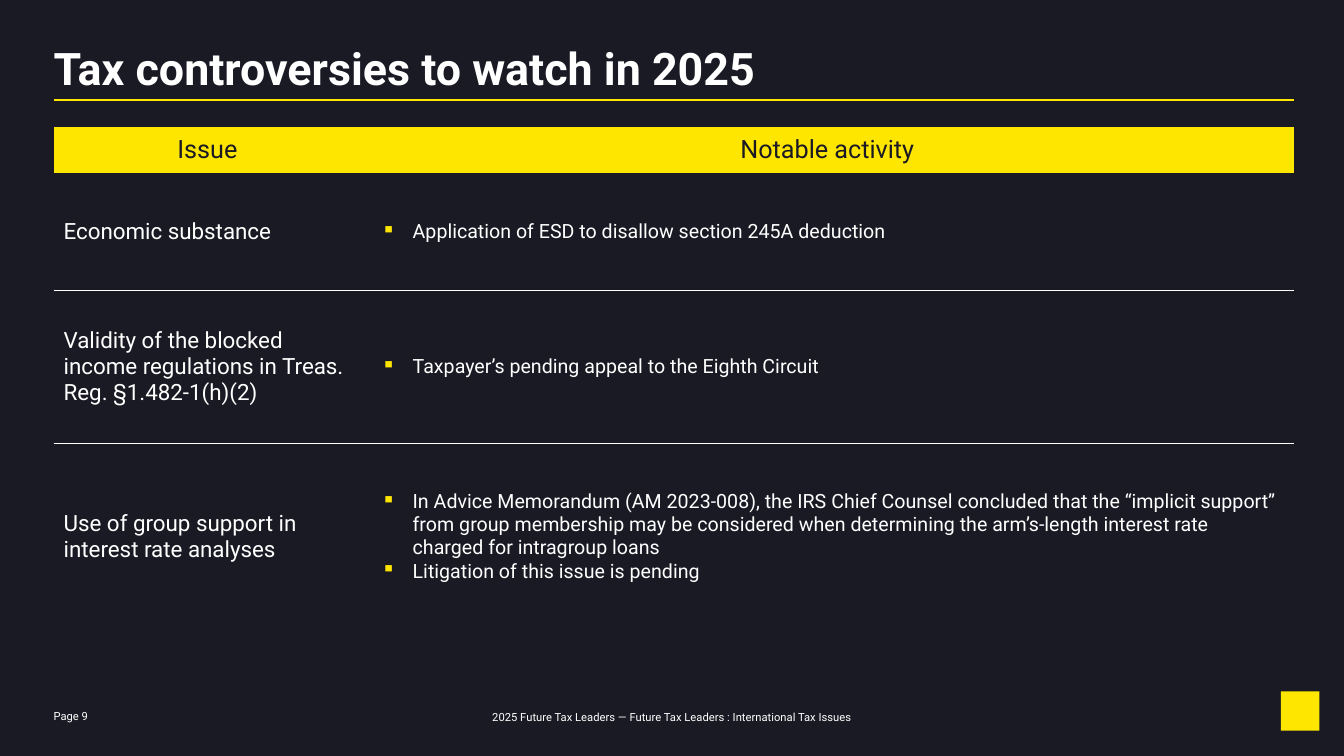
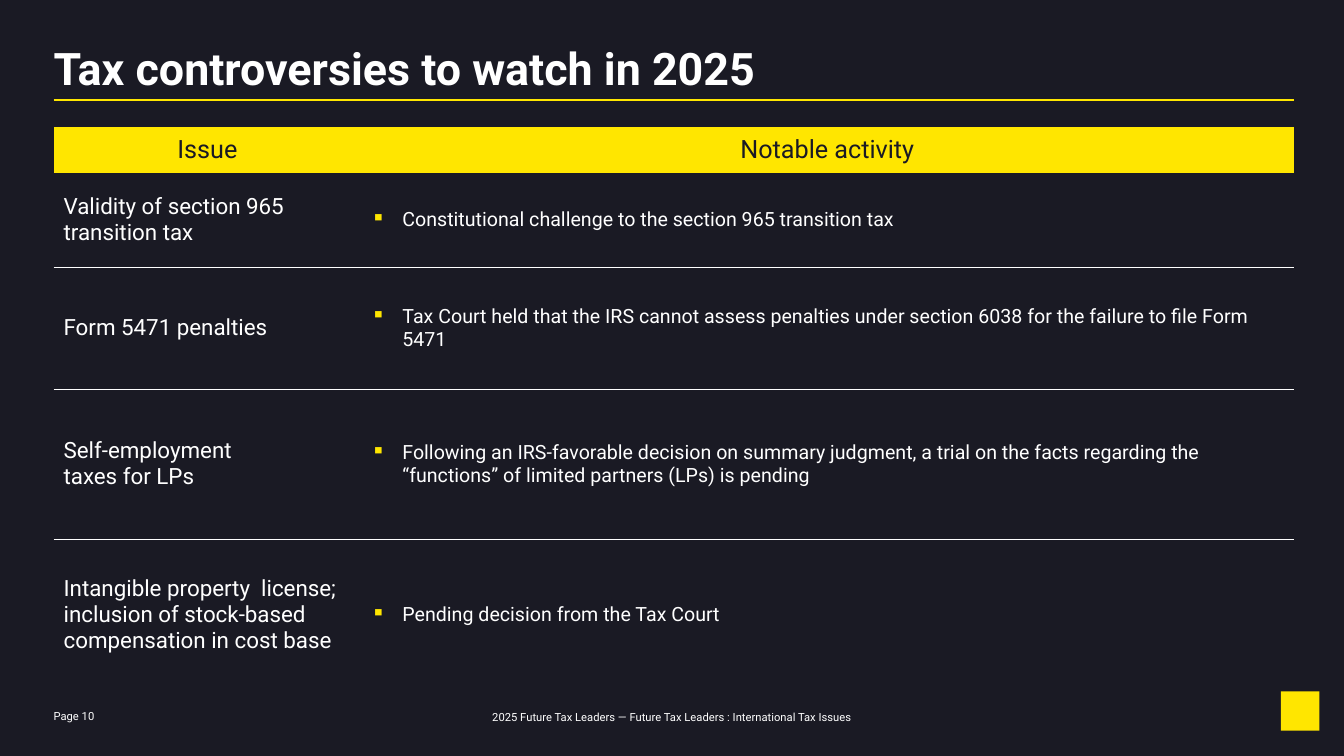
from lxml import etree
from pptx import Presentation
from pptx.dml.color import RGBColor
from pptx.enum import shapes, text
from pptx.oxml import ns, parse_xml
from pptx.util import Cm, Pt

DARK = RGBColor(0x1A, 0x1A, 0x24)
GOLD = RGBColor(0xFF, 0xE6, 0x00)
WHITE = RGBColor(0xFF, 0xFF, 0xFF)
FONT = "Roboto"
PLAIN = "{2D5ABB26-0587-4C30-8999-92F81FD0307C}"  # table style without grid
LEFT, RIGHT = Cm(1.35), Cm(32.61)
COLS = (7.75, 23.5)
HEAD = 1.17
MID = text.MSO_ANCHOR.MIDDLE

TITLE = "Tax controversies to watch in 2025"
FOOTER = "2025 Future Tax Leaders — Future Tax Leaders : International Tax Issues"

# Each slide: page number, left inset of the activity cells, rows of (height, issue, activities)
PAGES = [
    (9, 0.51, [
        (2.95, "Economic substance",
         ["Application of ESD to disallow section 245A deduction"]),
        (3.84, "Validity of the blocked income regulations in Treas. Reg. §1.482-1(h)(2)",
         ["Taxpayer’s pending appeal to the Eighth Circuit"]),
        (4.72, "Use of group support in interest rate analyses",
         ["In Advice Memorandum (AM 2023-008), the IRS Chief Counsel concluded that "
          "the “implicit support” from group membership may be considered when "
          "determining the arm’s-length interest rate charged for intragroup loans",
          "Litigation of this issue is pending"]),
    ]),
    (10, 0.25, [
        (2.36, "Validity of section 965 transition tax",
         ["Constitutional challenge to the section 965 transition tax"]),
        (3.07, "Form 5471 penalties",
         ["Tax Court held that the IRS cannot assess penalties under section 6038 "
          "for the failure to file Form 5471"]),
        (3.8, "Self-employment \vtaxes for LPs",
         ["Following an IRS-favorable decision on summary judgment, a trial on the "
          "facts regarding the “functions” of limited partners (LPs) is pending"]),
        (3.78, "Intangible property  license; inclusion of stock-based compensation in cost base",
         ["Pending decision from the Tax Court"]),
    ]),
]


def write(frame, lines, size, color=WHITE, bold=False, align=None, bullet=False):
    """Fill a text frame with one paragraph per line."""
    frame.word_wrap = True
    for i, line in enumerate(lines):
        para = frame.add_paragraph() if i else frame.paragraphs[0]
        para.text = line
        para.alignment = align
        for run in para.runs:
            font = run.font
            font.name, font.size, font.bold = FONT, Pt(size), bold
            font.color.rgb = color
        if bullet:
            props = para._p.get_or_add_pPr()
            props.set("marL", str(Cm(0.79)))
            props.set("indent", str(-Cm(0.79)))
            tint = etree.SubElement(props, ns.qn("a:buClr"))
            etree.SubElement(tint, ns.qn("a:srgbClr")).set("val", str(GOLD))
            etree.SubElement(props, ns.qn("a:buChar")).set("char", "▪")


def label(slide, line, box, size, anchor=text.MSO_ANCHOR.TOP, **style):
    """Add a text box without insets; box is left, top, width, height in cm."""
    frame = slide.shapes.add_textbox(*map(Cm, box)).text_frame
    frame.margin_left = frame.margin_right = frame.margin_top = frame.margin_bottom = 0
    frame.vertical_anchor = anchor
    write(frame, [line], size, **style)


deck = Presentation()
deck.slide_width, deck.slide_height = Cm(33.87), Cm(19.05)
CENTER = text.PP_ALIGN.CENTER

for page, inset, rows in PAGES:
    slide = deck.slides.add_slide(deck.slide_layouts[6])
    slide.background.fill.solid()
    slide.background.fill.fore_color.rgb = DARK

    # Title, rule, footer and mark
    label(slide, TITLE, (1.35, 1.02, 31.47, 1.3), 32, bold=True)
    rule = slide.shapes.add_connector(
        shapes.MSO_CONNECTOR.STRAIGHT, LEFT, Cm(2.52), RIGHT, Cm(2.52))
    rule.line.color.rgb, rule.line.width = GOLD, Pt(1.5)
    etree.SubElement(rule._element.spPr, ns.qn("a:effectLst"))
    label(slide, f"Page {page}", (1.35, 17.88, 1.42, 0.33), 8)
    label(slide, FOOTER, (12.24, 17.88, 9.4, 0.36), 8, anchor=MID, align=CENTER)
    mark = slide.shapes.add_shape(
        shapes.MSO_SHAPE.RECTANGLE, Cm(32.28), Cm(17.42), Cm(0.97), Cm(0.99))
    mark.shadow.inherit = False
    mark.fill.solid()
    mark.fill.fore_color.rgb = GOLD
    mark.line.fill.background()

    # Table of issues
    tall = [HEAD] + [row[0] for row in rows]
    table = slide.shapes.add_table(
        len(tall), 2, LEFT, Cm(3.2), Cm(sum(COLS)), Cm(sum(tall))).table
    table.first_row = table.horz_banding = False
    table._tbl.tblPr.find(ns.qn("a:tableStyleId")).text = PLAIN
    for col, width in zip(table.columns, COLS):
        col.width = Cm(width)
    for row, height in zip(table.rows, tall):
        row.height = Cm(height)
    for cell in table.iter_cells():
        cell.vertical_anchor = MID
        cell.fill.background()

    for cell, name in zip(table.rows[0].cells, ("Issue", "Notable activity")):
        cell.fill.solid()
        cell.fill.fore_color.rgb = GOLD
        write(cell.text_frame, [name], 18, color=DARK, align=CENTER)

    for i, (_, issue, acts) in enumerate(rows, 1):
        left, right = table.rows[i].cells
        write(left.text_frame, [issue], 16)
        write(right.text_frame, acts, 14, bullet=True)
        right.margin_left = Cm(inset)
        if i < len(rows):
            for cell in (left, right):
                cell._tc.get_or_add_tcPr().insert(0, parse_xml(
                    f'<a:lnB {ns.nsdecls("a")} w="{Pt(0.5)}"><a:solidFill>'
                    f'<a:srgbClr val="{WHITE}"/></a:solidFill></a:lnB>'))

deck.save("out.pptx")
